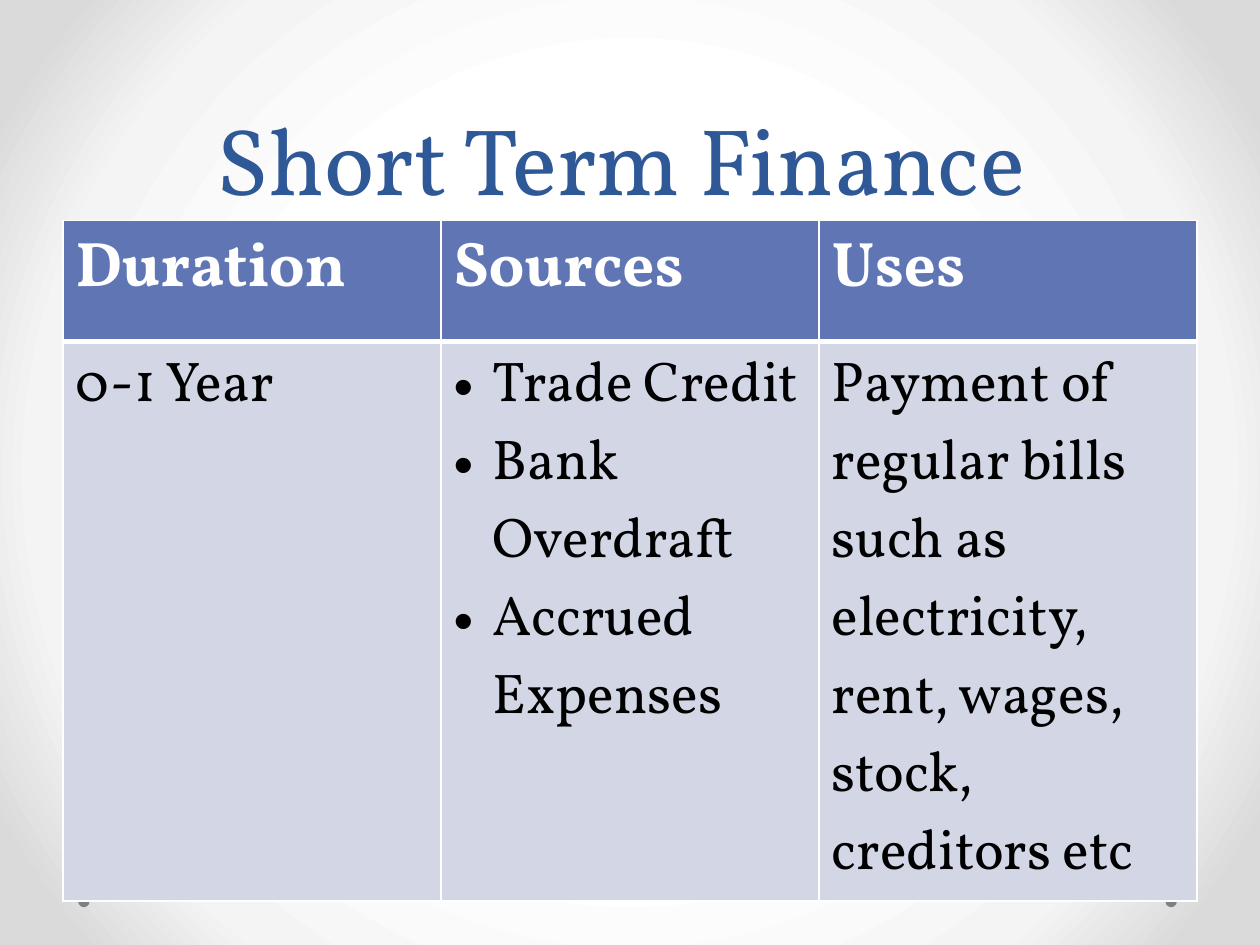
from lxml import etree
from pptx import Presentation
from pptx.dml.color import RGBColor
from pptx.enum.shapes import MSO_SHAPE
from pptx.enum.text import MSO_ANCHOR, PP_ALIGN
from pptx.oxml import parse_xml
from pptx.oxml.ns import nsdecls, qn
from pptx.util import Inches, Pt

HUES = {
    "title": "2F5897", "head": "6076B4", "body": "D2D6E5", "dot": "808080",
    "white": "FFFFFF", "black": "000000", "pale": "F4F4F4", "edge": "DADADA",
}
FONT = "Vollkorn"

deck = Presentation()
deck.slide_width, deck.slide_height = Inches(10), Inches(7.5)
wide, high = deck.slide_width, deck.slide_height
slide = deck.slides.add_slide(deck.slide_layouts[6])


def add_run(para, text, size, hue, bold=False):
    run = para.add_run()
    run.text = text
    run.font.name, run.font.size, run.font.bold = FONT, Pt(size), bold
    run.font.color.rgb = RGBColor.from_string(HUES[hue])


def add_edge(cell, side, width):
    line = etree.SubElement(cell._tc.get_or_add_tcPr(), qn(f"a:{side}"), w=str(Pt(width)))
    fill = etree.SubElement(line, qn("a:solidFill"))
    etree.SubElement(fill, qn("a:srgbClr"), val=HUES["white"])


# Background: radial glow
slide.background.fill.solid()
back = slide.element.find(".//" + qn("p:bgPr"))
stops = "".join(
    f'<a:gs pos="{pos * 1000}"><a:srgbClr val="{HUES[hue]}"/></a:gs>'
    for pos, hue in [(50, "white"), (76, "pale"), (92, "edge")]
)
glow = parse_xml(
    f'<a:gradFill {nsdecls("a")} rotWithShape="1"><a:gsLst>{stops}</a:gsLst>'
    '<a:path path="circle"><a:fillToRect l="50000" t="50000" r="50000" b="50000"/>'
    "</a:path></a:gradFill>"
)
back.replace(back.find(qn("a:solidFill")), glow)

# Corner dots
for left in (9.25, 0.62):
    dot = slide.shapes.add_shape(
        MSO_SHAPE.OVAL, Inches(left), Inches(7.11), Inches(0.09), Inches(0.09))
    dot.shadow.inherit = False
    dot.fill.solid()
    dot.fill.fore_color.rgb = RGBColor.from_string(HUES["dot"])
    dot.line.fill.background()

# Title
side, top = int(wide * 0.05), Inches(1.75)
frame = slide.shapes.add_textbox(side, 0, wide - 2 * side, top).text_frame
frame.word_wrap = True
frame.vertical_anchor = MSO_ANCHOR.BOTTOM
para = frame.paragraphs[0]
para.alignment = PP_ALIGN.CENTER
para.line_spacing = Pt(58)
add_run(para, "Short Term Finance ", 54, "title")

# Table: the body row holds seven lines of text
rows = [
    [["Duration"], ["Sources"], ["Uses"]],
    [["0-1 Year"],
     ["Trade Credit", "Bank Overdraft", "Accrued Expenses"],
     ["Payment of regular bills such as electricity, rent, wages, stock, creditors etc"]],
]
talls = [Inches(0.96), Inches(4.44)]
table = slide.shapes.add_table(
    2, 3, side, top, wide - 2 * side, sum(talls)).table
for row, tall in zip(table.rows, talls):
    row.height = tall

for r, row in enumerate(rows):
    head = r == 0
    for c, lines in enumerate(row):
        cell = table.cell(r, c)
        for edge in ("lnL", "lnR", "lnT", "lnB"):
            thick = (edge == "lnB") if head else (edge == "lnT")
            add_edge(cell, edge, 3 if thick else 1)
        cell.fill.solid()
        cell.fill.fore_color.rgb = RGBColor.from_string(HUES["head" if head else "body"])
        for i, text in enumerate(lines):
            frame = cell.text_frame
            para = frame.add_paragraph() if i else frame.paragraphs[0]
            if len(lines) > 1:
                props = para._p.get_or_add_pPr()
                props.set("marL", str(Inches(0.31)))
                props.set("indent", str(-Inches(0.31)))
                etree.SubElement(props, qn("a:buFont"), typeface="Arial")
                etree.SubElement(props, qn("a:buChar"), char="•")
            add_run(para, text, 36 if head else 32, "white" if head else "black", head)

deck.save("out.pptx")
